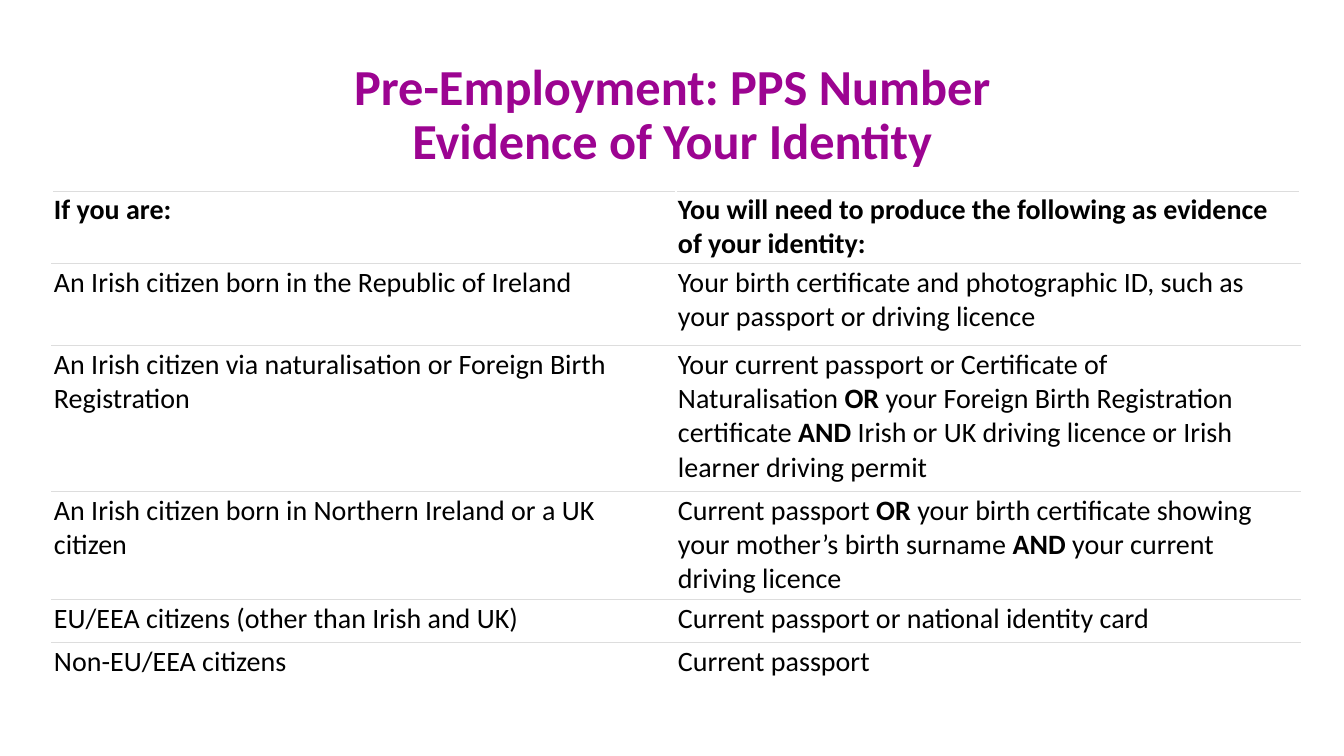
import pptx
import pptx.dml.color
import pptx.enum.text
import pptx.oxml
import pptx.oxml.ns
import pptx.util

# Content: ** marks bold words
TITLE_LINES = ["Pre-Employment: PPS Number", "Evidence of Your Identity"]
TABLE_ROWS = [
    ("**If you are:**",
     "**You will need to produce the following as evidence of your identity:**"),
    ("An Irish citizen born in the Republic of Ireland",
     "Your birth certificate and photographic ID, such as your passport or driving licence"),
    ("An Irish citizen via naturalisation or Foreign Birth Registration",
     "Your current passport or Certificate of Naturalisation **OR** your Foreign Birth "
     "Registration certificate **AND** Irish or UK driving licence or Irish learner driving permit"),
    ("An Irish citizen born in Northern Ireland or a UK citizen",
     "Current passport **OR** your birth certificate showing your mother’s birth surname "
     "**AND** your current driving licence"),
    ("EU/EEA citizens (other than Irish and UK)",
     "Current passport or national identity card"),
    ("Non-EU/EEA citizens", "Current passport"),
]

# Format and layout, in px
PURPLE = pptx.dml.color.RGBColor(0x9C, 0x04, 0x91)
BLACK = pptx.dml.color.RGBColor(0, 0, 0)
WHITE = pptx.dml.color.RGBColor(0xFF, 0xFF, 0xFF)
BORDER_GREY = pptx.dml.color.RGBColor(0xDD, 0xDD, 0xDD)
FONT = "Calibri"
SLIDE_SIZE = (1344, 756)
TITLE_BOX = (219, 53, 907, 126)
TABLE_LEFT, TABLE_TOP = 52, 191
COLUMN_WIDTH = 624
ROW_HEIGHTS = [70, 82, 146, 108, 43, 30]
CELL_MARGIN = 2
BORDER_WIDTH = pptx.util.Pt(0.5)
NO_BREAK_SPACE = chr(160)


def px(length):
    return round(length * 12192000 / 1344)


def set_font(font, size, color, bold):
    values = {"name": FONT, "size": pptx.util.Pt(size), "bold": bold}
    for name, value in values.items():
        setattr(font, name, value)
    font.color.rgb = color


def write_marked_text(paragraph, text):
    # Bold words inside a sentence stay on the line of their neighbours
    text = text.replace(" **", NO_BREAK_SPACE + "**").replace("** ", "**" + NO_BREAK_SPACE)
    for index, part in enumerate(text.split("**")):
        if part:
            run = paragraph.add_run()
            run.text = part
            set_font(run.font, 20, BLACK, index % 2 == 1)


def add_border(cell, side):
    line = pptx.oxml.parse_xml(
        f'<a:{side} {pptx.oxml.ns.nsdecls("a")} w="{BORDER_WIDTH}"><a:solidFill>'
        f'<a:srgbClr val="{BORDER_GREY}"/></a:solidFill></a:{side}>')
    properties = cell._tc.get_or_add_tcPr()
    properties.insert(len(properties) - 1, line)  # before the fill


def add_title(slide):
    title = slide.shapes.title
    title.left, title.top, title.width, title.height = map(px, TITLE_BOX)
    frame = title.text_frame
    frame.vertical_anchor = pptx.enum.text.MSO_ANCHOR.MIDDLE
    frame.text = "\v".join(TITLE_LINES)
    paragraph = frame.paragraphs[0]
    paragraph.alignment = pptx.enum.text.PP_ALIGN.CENTER
    paragraph.line_spacing = 0.9
    for run in paragraph.runs:
        set_font(run.font, 36, PURPLE, True)


def add_identity_table(slide):
    column_count = len(TABLE_ROWS[0])
    table = slide.shapes.add_table(
        len(TABLE_ROWS), column_count, px(TABLE_LEFT), px(TABLE_TOP),
        px(COLUMN_WIDTH * column_count), px(sum(ROW_HEIGHTS))).table
    table.first_row = table.horz_banding = False
    for column in table.columns:
        column.width = px(COLUMN_WIDTH)
    for row_index, texts in enumerate(TABLE_ROWS):
        table.rows[row_index].height = px(ROW_HEIGHTS[row_index])
        for column_index, text in enumerate(texts):
            cell = table.cell(row_index, column_index)
            for side in ("left", "top", "right", "bottom"):
                setattr(cell, f"margin_{side}", px(CELL_MARGIN))
            cell.fill.solid()
            cell.fill.fore_color.rgb = WHITE
            add_border(cell, "lnT")
            if row_index < len(TABLE_ROWS) - 1:
                add_border(cell, "lnB")
            write_marked_text(cell.text_frame.paragraphs[0], text)


def main():
    presentation = pptx.Presentation()
    presentation.slide_width, presentation.slide_height = map(px, SLIDE_SIZE)
    slide = presentation.slides.add_slide(presentation.slide_layouts[5])
    add_title(slide)
    add_identity_table(slide)
    presentation.save("out.pptx")


if __name__ == "__main__":
    main()
